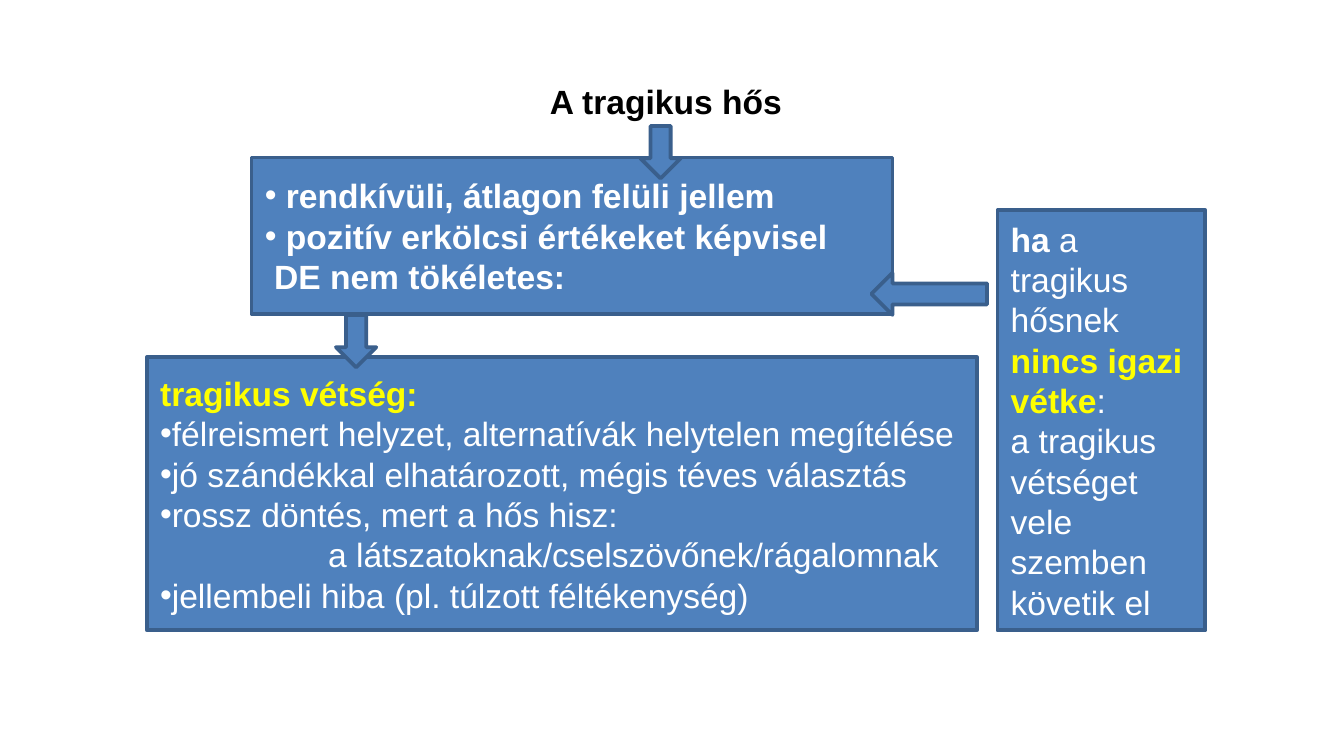
"""Builds a slide on the tragic hero: traits, tragic flaw and the exception."""
from lxml import etree
from pptx import Presentation
from pptx.dml.color import RGBColor
from pptx.enum import shapes, text
from pptx.oxml import ns
from pptx.util import Pt

WHITE, YELLOW, BLACK = "FFFFFF", "FFFF00", "000000"


def color(value):
    """Return the colour for a hex string."""
    return RGBColor.from_string(value)


class HeroSlide:
    """Holds the style and the current slide."""

    font, size = "Arial", 18
    fill, outline, outline_width = "4F81BD", "3A5F8C", 2

    def __init__(self, deck):
        """Add a title-only slide to the deck."""
        self.slide = deck.slides.add_slide(deck.slide_layouts[5])

    def run(self, paragraph, wording, hue=WHITE, bold=False):
        """Add one styled run."""
        run = paragraph.add_run()
        run.text = wording
        run.font.name, run.font.size, run.font.bold = self.font, Pt(self.size), bold
        run.font.color.rgb = color(hue)

    def title(self, wording, left, top, width, height):
        """Place and fill the title."""
        title = self.slide.shapes.title
        title.left, title.top, title.width, title.height = map(Pt, (left, top, width, height))
        frame = title.text_frame
        frame.word_wrap = False
        frame.auto_size = text.MSO_AUTO_SIZE.SHAPE_TO_FIT_TEXT
        frame.vertical_anchor = text.MSO_ANCHOR.TOP
        frame.paragraphs[0].alignment = text.PP_ALIGN.CENTER
        self.run(frame.paragraphs[0], wording, BLACK, True)

    def block(self, kind, left, top, width, height):
        """Add a preset shape in the slide's style."""
        block = self.slide.shapes.add_shape(kind, *map(Pt, (left, top, width, height)))
        block.shadow.inherit = False
        block.fill.solid()
        block.fill.fore_color.rgb = color(self.fill)
        block.line.color.rgb = color(self.outline)
        block.line.width = Pt(self.outline_width)
        return block

    def panel(self, left, top, width, height, lines):
        """Add a rectangle with lines of (bullet, margin, hanging, runs)."""
        frame = self.block(shapes.MSO_SHAPE.RECTANGLE, left, top, width, height).text_frame
        frame.word_wrap = True
        frame.vertical_anchor = text.MSO_ANCHOR.MIDDLE
        for number, (bullet, margin, hanging, runs) in enumerate(lines):
            paragraph = frame.add_paragraph() if number else frame.paragraphs[0]
            paragraph.alignment = text.PP_ALIGN.LEFT
            self.indent(paragraph, bullet, margin, hanging)
            for run in runs:
                self.run(paragraph, *run)

    def indent(self, paragraph, bullet, margin, hanging):
        """Set the margin, hanging indent and bullet of a paragraph."""
        properties = paragraph._p.get_or_add_pPr()
        properties.set("marL", str(Pt(margin)))
        properties.set("indent", str(-Pt(hanging)))
        if bullet:
            etree.SubElement(properties, ns.qn("a:buFont")).set("typeface", self.font)
            etree.SubElement(properties, ns.qn("a:buChar")).set("char", "•")

    def arrow(self, kind, left, top, width, height, rotation=0):
        """Add a block arrow."""
        self.block(kind, left, top, width, height).rotation = rotation


def main():
    """Build and save the slide."""
    deck = Presentation()
    deck.slide_width, deck.slide_height = Pt(720), Pt(405)
    hero = HeroSlide(deck)
    hero.title("A tragikus hős", 286.5, 39.8, 140.5, 29)

    traits = ["rendkívüli, átlagon felüli jellem", "pozitív erkölcsi értékeket képvisel"]
    hero.panel(134.8, 84.4, 343.4, 83.8, [
        *((True, 11.3, 11.3, [(trait, WHITE, True)]) for trait in traits),
        (False, 5, 0, [("DE nem tökéletes:", WHITE, True)]),
    ])

    flaws = [
        "félreismert helyzet, alternatívák helytelen megítélése",
        "jó szándékkal elhatározott, mégis téves választás",
        "rossz döntés, mert a hős hisz:",
        "jellembeli hiba (pl. túlzott féltékenység)",
    ]
    flaw_lines = [(True, 0, 0, [(flaw,)]) for flaw in flaws]
    hero.panel(78.7, 191.3, 444.6, 146.4, [
        (False, 0, 0, [("tragikus vétség:", YELLOW, True)]),
        *flaw_lines[:3],
        (False, 90, 0, [("a látszatoknak/cselszövőnek/rágalomnak",)]),
        flaw_lines[3],
    ])

    hero.panel(534.4, 112.5, 111.4, 225.2, [
        (False, 0, 0, [("ha", WHITE, True), (" a tragikus hősnek ",),
                       ("nincs igazi vétke", YELLOW, True), (":",)]),
        (False, 0, 0, [("a tragikus vétséget vele szemben követik el",)]),
    ])

    down, right = shapes.MSO_SHAPE.DOWN_ARROW, shapes.MSO_SHAPE.RIGHT_ARROW
    hero.arrow(down, 180, 168.7, 21.6, 28.1)
    hero.arrow(right, 466.8, 146.2, 62, 22.5, 180)
    hero.arrow(down, 343.1, 67.5, 21.6, 28.1)
    deck.save("out.pptx")


if __name__ == "__main__":
    main()
